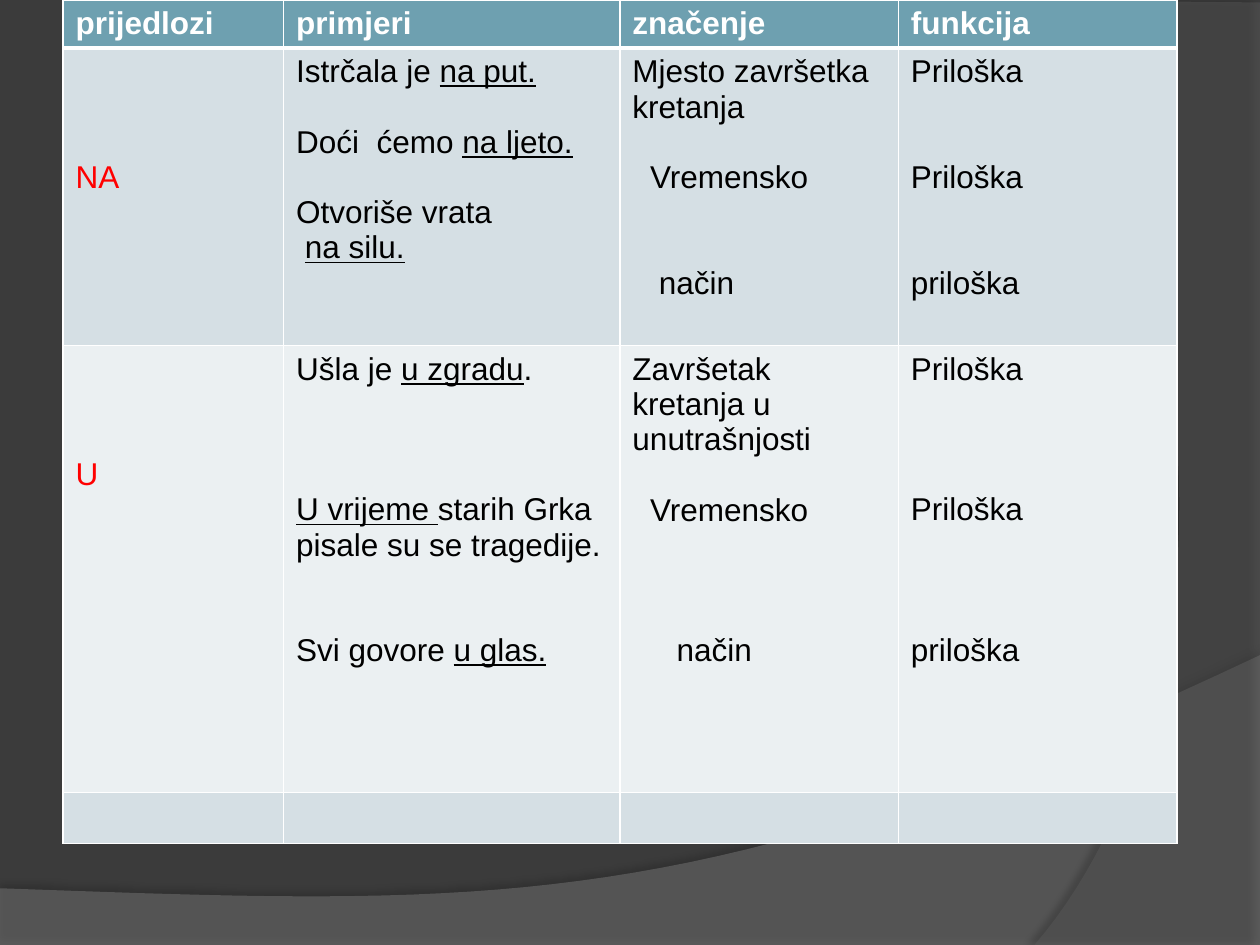
from dataclasses import dataclass

from lxml.etree import SubElement
from pptx import Presentation
from pptx.dml.color import RGBColor
from pptx.oxml.ns import qn
from pptx.util import Inches, Pt


@dataclass(frozen=True)
class Theme:
    """Colours, font and sizes of the deck."""
    font: str = "Arial"
    size: float = 18
    line_height: float = 20.1
    background: str = "3B3B3B"
    wave: str = "7F7F7F"
    arc: str = "5E5E5E"
    shadow: str = "000000"
    border: str = "FFFFFF"
    header: str = "6EA0B0"
    header_text: str = "FFFFFF"
    bands: tuple = ("D5DFE4", "EBF0F2")
    text: str = "000000"
    accent: str = "FF0000"


@dataclass(frozen=True)
class Line:
    """A paragraph with underlined parts between underscores, a gap above and an indent."""
    text: str
    gap: int = 0
    indent: float = 0


THEME = Theme()
HEADINGS = ["prijedlozi", "primjeri", "značenje", "funkcija"]
ROWS = [
    [
        [Line("NA", 3)],
        [Line("Istrčala je _na put._"), Line("Doći  ćemo _na ljeto._", 1),
         Line("Otvoriše vrata", 1), Line("_na silu._", 0, 0.07)],
        [Line("Mjesto završetka kretanja"), Line("Vremensko", 1, 0.14), Line("način", 2, 0.21)],
        [Line("Priloška"), Line("Priloška", 2), Line("priloška", 2)],
    ],
    [
        [Line("U", 3)],
        [Line("Ušla je _u zgradu_."), Line("_U vrijeme _starih Grka pisale su se tragedije.", 3),
         Line("Svi govore _u glas._", 2)],
        [Line("Završetak kretanja u unutrašnjosti"), Line("Vremensko", 1, 0.14),
         Line("način", 3, 0.35)],
        [Line("Priloška"), Line("Priloška", 3), Line("priloška", 3)],
    ],
    [[], [], [], []],
]
COLUMN_WIDTHS = [1.75, 2.67, 2.21, 2.21]
ROW_HEIGHTS = [0.38, 2.36, 3.55, 0.38]


def color(value):
    """Turn a hex value into a colour."""
    return RGBColor.from_string(value)


def curve(start, first, second, end, steps=40):
    """Return points along a cubic curve, without its start."""
    points = []
    for step in range(1, steps + 1):
        t = step / steps
        weights = ((1 - t) ** 3, 3 * t * (1 - t) ** 2, 3 * t * t * (1 - t), t ** 3)
        points.append(tuple(sum(w * p for w, p in zip(weights, axis))
                            for axis in zip(start, first, second, end)))
    return points


def add_backdrop_shape(page, points, fill, alpha, shadow_alpha, distance, direction):
    """Draw a translucent outline with a soft shadow."""
    corners = [(Inches(x), Inches(y)) for x, y in points]
    builder = page.shapes.build_freeform(*corners[0], scale=1.0)
    builder.add_line_segments(corners[1:], close=True)
    shape = builder.convert_to_shape()
    shape.fill.solid()
    shape.fill.fore_color.rgb = color(fill)
    shape.line.fill.background()
    shape.shadow.inherit = False
    properties = shape.element.spPr
    solid = properties.find(qn("a:solidFill")).find(qn("a:srgbClr"))
    SubElement(solid, qn("a:alpha"), val=str(alpha * 1000))
    shadow = SubElement(properties.find(qn("a:effectLst")), qn("a:outerShdw"),
                        blurRad=str(Pt(4)), dist=str(Pt(distance)),
                        dir=str(direction * 60000), algn="ctr", rotWithShape="0")
    tint = SubElement(shadow, qn("a:srgbClr"), val=THEME.shadow)
    SubElement(tint, qn("a:alpha"), val=str(shadow_alpha * 1000))


def add_backdrop(page, width, height):
    """Fill the page and lay the wave and the arc over it."""
    page.background.fill.solid()
    page.background.fill.fore_color.rgb = color(THEME.background)
    wave = [(0, 7.05), (0, height), (width, height), (width, 5.2)]
    wave += curve((width, 5.2), (5.59, 7.29), (3.91, 7.19), (0, 7.05))
    add_backdrop_shape(page, wave, THEME.wave, 45, 35, 3.5, 270)
    arc = [(width, 0.02), (width, height), (8.21, height)]
    arc += curve((8.21, height), (9.35, 6.19), (10.18, 3), (8, 0))
    add_backdrop_shape(page, arc, THEME.arc, 40, 45, 4, 180)


def style_cell(cell, fill, top=1, bottom=1):
    """Give a cell its borders and fill."""
    properties = cell._tc.get_or_add_tcPr()
    for side, weight in (("L", 1), ("R", 1), ("T", top), ("B", bottom)):
        edge = SubElement(properties, qn(f"a:ln{side}"), w=str(Pt(weight)))
        SubElement(SubElement(edge, qn("a:solidFill")), qn("a:srgbClr"), val=THEME.border)
    cell.fill.solid()
    cell.fill.fore_color.rgb = color(fill)


def write_lines(cell, lines, text_color, bold=False):
    """Write lines into a cell, with gaps as spacing."""
    frame = cell.text_frame
    for index, line in enumerate(lines):
        para = frame.add_paragraph() if index else frame.paragraphs[0]
        gap = Pt(line.gap * THEME.line_height)
        if index:
            para.space_before = gap
        else:
            cell.margin_top = Inches(0.05) + gap
        if line.indent:
            para._p.get_or_add_pPr().set("marL", str(Inches(line.indent)))
        for part, text in enumerate(line.text.split("_")):
            if text:
                span = para.add_run()
                span.text = text
                span.font.name = THEME.font
                span.font.size = Pt(THEME.size)
                span.font.bold = bold
                span.font.underline = part % 2 == 1
                span.font.color.rgb = color(text_color)


def add_preposition_table(page, left, top):
    """Place the table of prepositions at the given corner."""
    table = page.shapes.add_table(
        len(ROW_HEIGHTS), len(COLUMN_WIDTHS), Inches(left), Inches(top),
        Inches(sum(COLUMN_WIDTHS)), Inches(sum(ROW_HEIGHTS))).table
    for column, width in zip(table.columns, COLUMN_WIDTHS):
        column.width = Inches(width)
    for row, height in zip(table.rows, ROW_HEIGHTS):
        row.height = Inches(height)
    for column, heading in enumerate(HEADINGS):
        cell = table.cell(0, column)
        style_cell(cell, THEME.header, bottom=3)
        write_lines(cell, [Line(heading)], THEME.header_text, bold=True)
    for row, contents in enumerate(ROWS, start=1):
        for column, lines in enumerate(contents):
            cell = table.cell(row, column)
            style_cell(cell, THEME.bands[(row - 1) % 2], top=3 if row == 1 else 1)
            write_lines(cell, lines, THEME.text if column else THEME.accent)


def main():
    """Build and save the deck."""
    deck = Presentation()
    deck.slide_width, deck.slide_height = Inches(10), Inches(7.5)
    page = deck.slides.add_slide(deck.slide_layouts[6])
    add_backdrop(page, 10, 7.5)
    add_preposition_table(page, 0.5, 0)
    deck.save("out.pptx")


if __name__ == "__main__":
    main()
